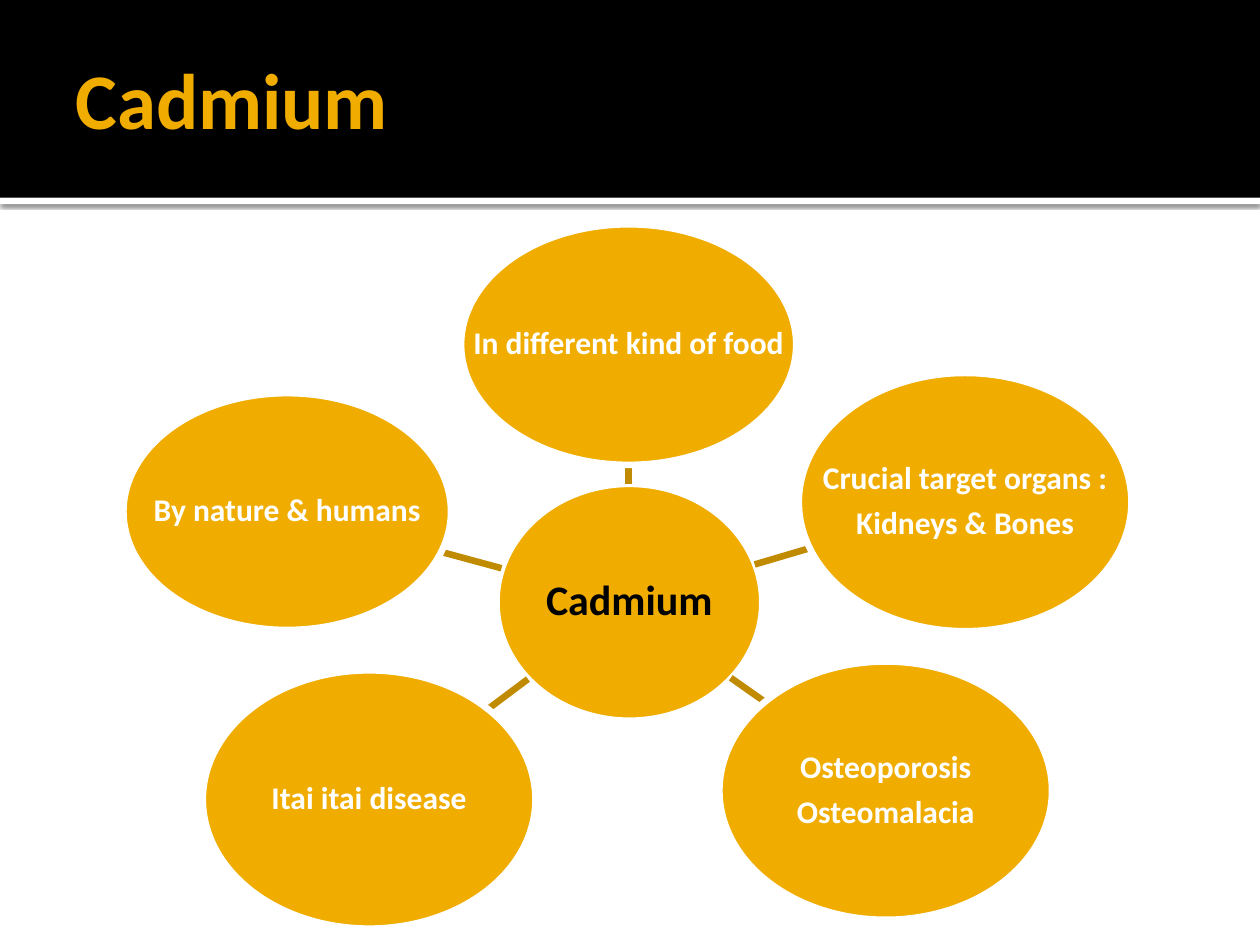
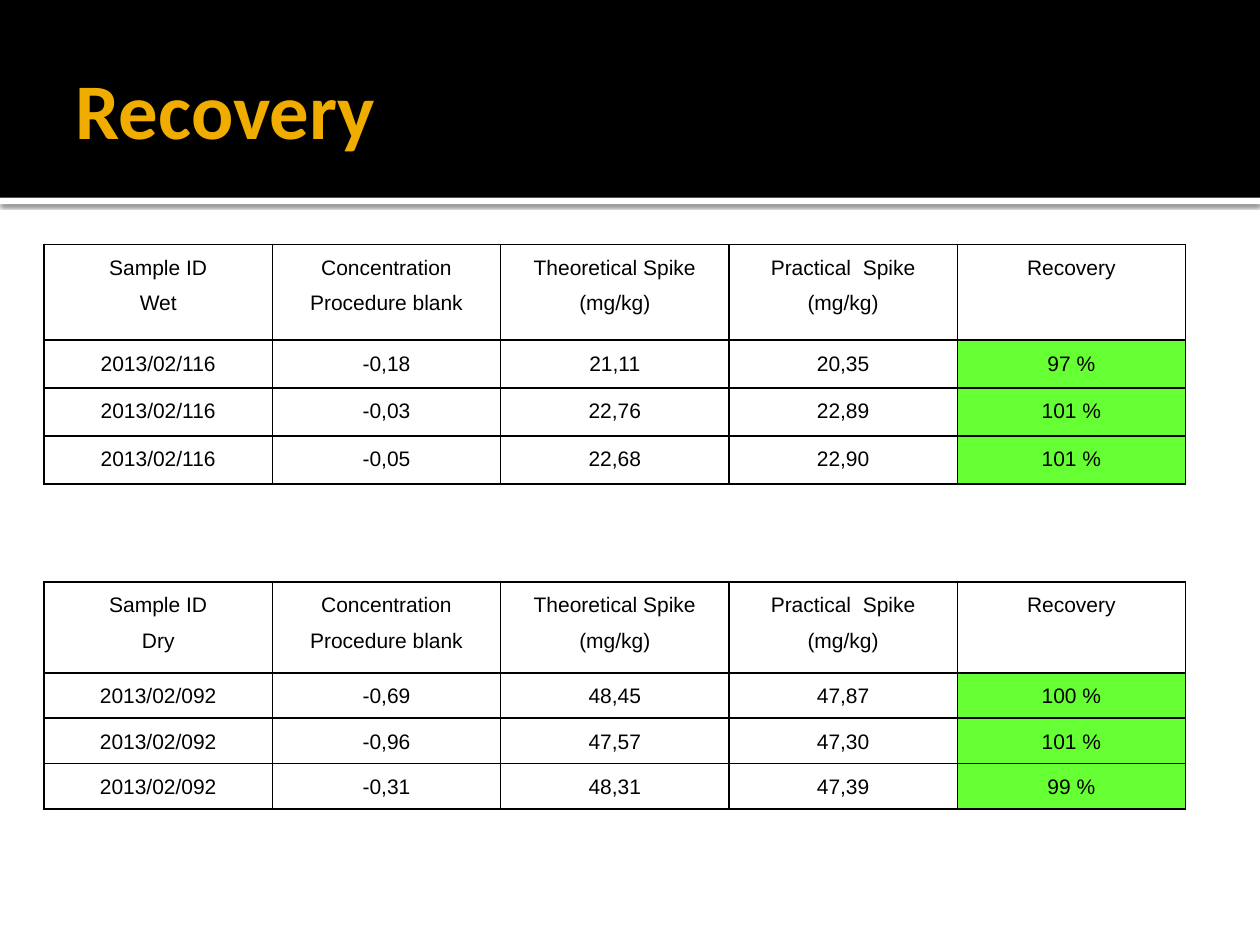
from dataclasses import dataclass

from lxml import etree
from pptx import Presentation
from pptx.dml.color import RGBColor
from pptx.enum.shapes import MSO_CONNECTOR, MSO_SHAPE
from pptx.enum.text import MSO_ANCHOR, MSO_AUTO_SIZE, PP_ALIGN
from pptx.oxml import parse_xml
from pptx.oxml.ns import nsdecls, qn
from pptx.util import Inches, Pt

COLORS = {
    "black": "000000",
    "white": "FFFFFF",
    "amber": "F0AD00",
    "spoke": "C08B00",
    "green": "66FF33",
}
HEAD_FONT = "Calibri"
TABLE_FONT = "Arial"
OUTLINE = Pt(3.78)


@dataclass
class Bubble:
    left: float
    top: float
    width: float
    height: float
    text: str
    size: int = 18
    color: str = "white"
    spoke: tuple[float, float, float, float] | None = None  # x1, y1, x2, y2


@dataclass
class SpikeTable:
    top: float
    row_height: float
    state: str
    sample: str
    rows: list[tuple[str, str, str, str]]


HUB = Bubble(3.94, 3.84, 2.11, 1.88, "Cadmium", 24, "black")
SATELLITES = [
    Bubble(3.66, 1.78, 2.66, 1.91, "In different kind of food",
           spoke=(4.99, 3.84, 4.99, 3.69)),
    Bubble(6.34, 2.96, 2.64, 2.05, "Crucial target organs :\nKidneys & Bones",
           spoke=(5.99, 4.48, 6.43, 4.35)),
    Bubble(5.71, 5.25, 2.64, 2.05, "Osteoporosis\nOsteomalacia",
           spoke=(5.8, 5.38, 6.07, 5.57)),
    Bubble(1.61, 5.32, 2.64, 2.05, "Itai itai disease",
           spoke=(4.19, 5.39, 3.87, 5.63)),
    Bubble(0.98, 3.12, 2.6, 1.88, "By nature & humans",
           spoke=(3.98, 4.51, 3.5, 4.38)),
]

TABLES = [
    SpikeTable(1.94, 0.38, "Wet", "2013/02/116", [
        ("-0,18", "21,11", "20,35", "97 %"),
        ("-0,03", "22,76", "22,89", "101 %"),
        ("-0,05", "22,68", "22,90", "101 %"),
    ]),
    SpikeTable(4.62, 0.36, "Dry", "2013/02/092", [
        ("-0,69", "48,45", "47,87", "100 %"),
        ("-0,96", "47,57", "47,30", "101 %"),
        ("-0,31", "48,31", "47,39", "99 %"),
    ]),
]


def rgb(name: str) -> RGBColor:
    return RGBColor.from_string(COLORS[name])


def style_font(font, name: str, size: int, color: str, bold: bool) -> None:
    font.name, font.size, font.bold = name, Pt(size), bold
    font.color.rgb = rgb(color)


# Shared frame: black title band, white strip with a soft shadow, title
def add_band(s, top: float, height: float, color: str):
    sp = s.shapes.add_shape(MSO_SHAPE.RECTANGLE, 0, Inches(top),
                            Inches(10), Inches(height))
    sp.shadow.inherit = False
    sp.fill.solid()
    sp.fill.fore_color.rgb = rgb(color)
    sp.line.fill.background()
    return sp


def add_titled_slide(prs, title: str, title_height: float):
    s = prs.slides.add_slide(prs.slide_layouts[5])
    strip = add_band(s, 1.57, 0.05, "white")
    effects = strip.element.spPr.find(qn("a:effectLst"))
    effects.append(parse_xml(
        f'<a:outerShdw {nsdecls("a")} blurRad="{Pt(2.5)}" dist="{Pt(0.8)}" '
        f'dir="5400000" rotWithShape="0"><a:srgbClr val="{COLORS["black"]}">'
        '<a:alpha val="60000"/></a:srgbClr></a:outerShdw>'))
    add_band(s, 0, 1.57, "black")

    sp = s.shapes.title
    sp.element.getparent().append(sp.element)  # in front of the bands
    sp.left, sp.top = Inches(0.5), Inches(0.17)
    sp.width, sp.height = Inches(9), Inches(title_height)
    tf = sp.text_frame
    tf.text = title
    tf.auto_size = MSO_AUTO_SIZE.NONE
    tf.vertical_anchor = MSO_ANCHOR.MIDDLE
    tf.margin_left = Inches(0.1)
    tf.margin_right = tf.margin_top = tf.margin_bottom = Inches(0.05)
    p = tf.paragraphs[0]
    p.alignment = PP_ALIGN.LEFT
    style_font(p.font, HEAD_FONT, 45, "amber", True)
    return s


# Hub-and-spoke diagram
def add_bubble(s, bubble: Bubble) -> None:
    if bubble.spoke:
        line = s.shapes.add_connector(MSO_CONNECTOR.STRAIGHT,
                                      *map(Inches, bubble.spoke))
        line.line.color.rgb = rgb("spoke")
        line.line.width = OUTLINE
        etree.SubElement(line.element.spPr, qn("a:effectLst"))

    sp = s.shapes.add_shape(
        MSO_SHAPE.OVAL, Inches(bubble.left), Inches(bubble.top),
        Inches(bubble.width), Inches(bubble.height))
    sp.shadow.inherit = False
    sp.fill.solid()
    sp.fill.fore_color.rgb = rgb("amber")
    sp.line.color.rgb = rgb("white")
    sp.line.width = OUTLINE
    tf = sp.text_frame
    tf.text = bubble.text
    tf.word_wrap = False
    tf.vertical_anchor = MSO_ANCHOR.MIDDLE
    tf.margin_left = tf.margin_right = Inches(0.01)
    tf.margin_top = tf.margin_bottom = Inches(0.01)
    for p in tf.paragraphs:
        p.alignment = PP_ALIGN.CENTER
        p.line_spacing = 0.9
        p.space_after = Pt(0.35 * bubble.size)
        style_font(p.font, HEAD_FONT, bubble.size, bubble.color, True)


# Recovery tables
def style_cell(cell, text: str, highlighted: bool) -> None:
    cell.text = text
    cell.margin_left = cell.margin_right = Inches(0.07)
    cell.margin_top = cell.margin_bottom = 0
    for p in cell.text_frame.paragraphs:
        p.alignment = PP_ALIGN.CENTER
        p.line_spacing = 1.5
        style_font(p.font, TABLE_FONT, 12, "black", False)
    tc_pr = cell._tc.get_or_add_tcPr()
    for side in ("lnL", "lnR", "lnT", "lnB"):
        tc_pr.append(parse_xml(
            f'<a:{side} {nsdecls("a")} w="{Pt(1)}"><a:solidFill>'
            f'<a:srgbClr val="{COLORS["black"]}"/></a:solidFill></a:{side}>'))
    if highlighted:
        cell.fill.solid()
        cell.fill.fore_color.rgb = rgb("green")
    else:
        cell.fill.background()


def add_spike_table(s, data: SpikeTable) -> None:
    header = (f"Sample ID\n{data.state}", "Concentration Procedure blank",
              "Theoretical Spike\n(mg/kg)", "Practical  Spike\n(mg/kg)",
              "Recovery")
    grid = [header] + [(data.sample, *row) for row in data.rows]
    units = len(grid) + 1  # the header is two rows high
    table = s.shapes.add_table(
        len(grid), len(header), Inches(0.35), Inches(data.top),
        Inches(9.06), Inches(units * data.row_height)).table
    table.first_row = table.horz_banding = False
    for r, row in enumerate(grid):
        table.rows[r].height = Inches(data.row_height * (1 if r else 2))
        for c, text in enumerate(row):
            style_cell(table.cell(r, c), text,
                       r > 0 and c == len(header) - 1)


def main() -> None:
    prs = Presentation()
    prs.slide_width, prs.slide_height = Inches(10), Inches(7.5)

    s = add_titled_slide(prs, "Cadmium", 1.22)
    for bubble in [HUB, *SATELLITES]:
        add_bubble(s, bubble)

    s = add_titled_slide(prs, "Recovery", 1.37)
    for data in TABLES:
        add_spike_table(s, data)

    prs.save("out.pptx")


if __name__ == "__main__":
    main()
